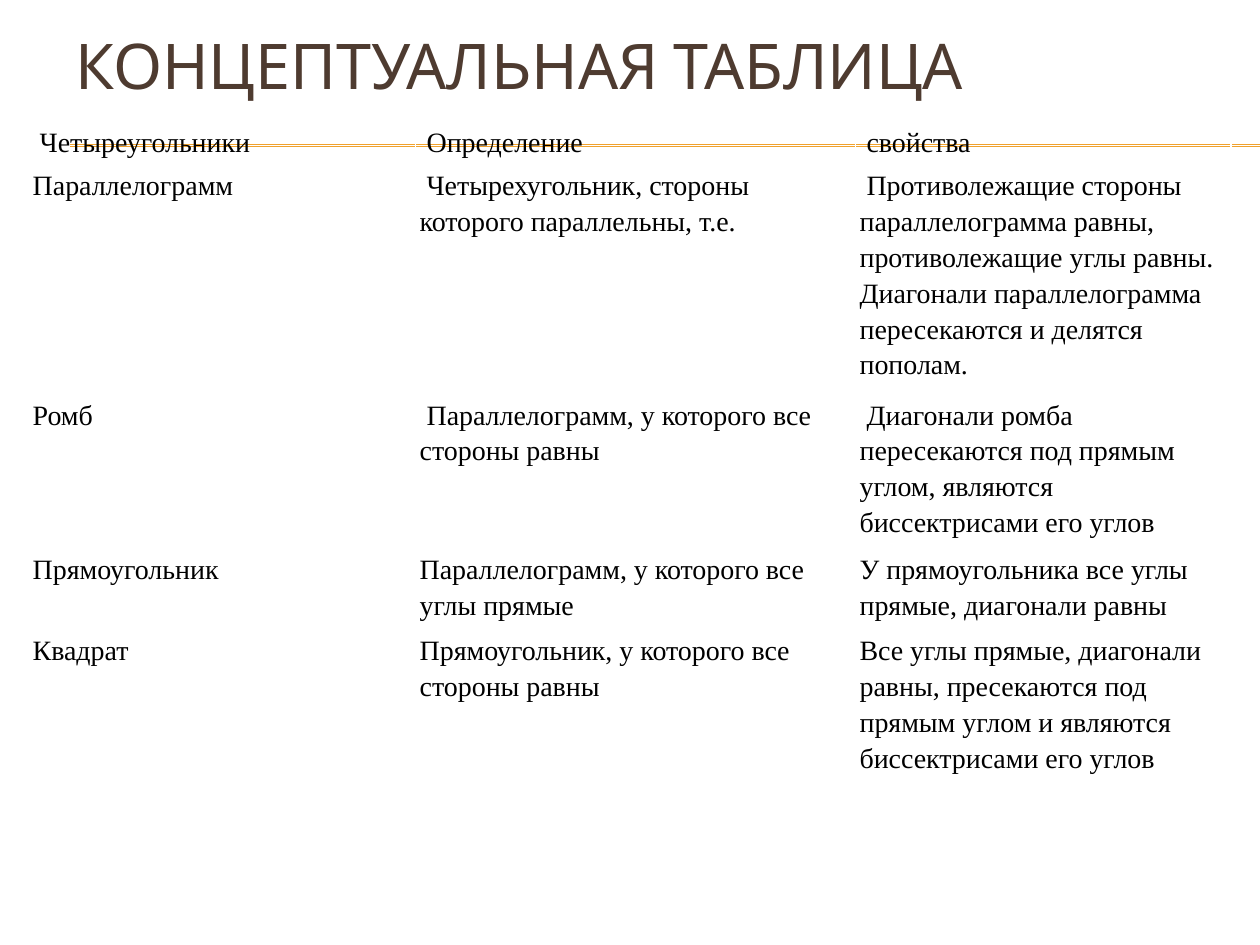
from typing import NamedTuple

from lxml import etree
from pptx import Presentation
from pptx.dml.color import RGBColor
from pptx.enum.shapes import MSO_CONNECTOR
from pptx.enum.text import MSO_ANCHOR, PP_ALIGN
from pptx.oxml.ns import qn
from pptx.util import Cm, Pt

STRAIGHT = MSO_CONNECTOR.STRAIGHT
LEFT = PP_ALIGN.LEFT
TOP, MIDDLE = MSO_ANCHOR.TOP, MSO_ANCHOR.MIDDLE

SLIDE_WIDTH, SLIDE_HEIGHT = Cm(25.4), Cm(19.05)
TITLE_ONLY = 5
BROWN, AMBER, BLACK, WHITE = "4E3B30", "F0A22E", "000000", "FFFFFF"
COLUMN_WIDTHS = (7.8, 8.87, 7.57)
CELL_INSET = Cm(0.08)


class TableRow(NamedTuple):
    height: float
    figure: str
    definition: str
    properties: str


ROWS = (
    TableRow(0.86, " Четыреугольники", " Определение", " свойства"),
    TableRow(4.62, "Параллелограмм",
             " Четырехугольник, стороны которого параллельны, т.е.",
             " Противолежащие стороны параллелограмма равны, противолежащие углы равны.\n"
             "Диагонали параллелограмма пересекаются и делятся пополам."),
    TableRow(3.12, "Ромб",
             " Параллелограмм, у которого все стороны равны",
             " Диагонали ромба пересекаются под прямым углом, являются биссектрисами его углов"),
    TableRow(1.63, "Прямоугольник",
             "Параллелограмм, у которого все углы прямые",
             "У прямоугольника все углы прямые, диагонали равны"),
    TableRow(3.89, "Квадрат",
             "Прямоугольник, у которого все стороны равны",
             "Все углы прямые, диагонали равны, пресекаются под прямым углом "
             "и являются биссектрисами его углов"),
)


def color(value: str) -> RGBColor:
    return RGBColor.from_string(value)


def write_text(frame, text: str, *, font: str, size: float, fill: str,
               spacing: float = 1.0) -> None:
    frame.word_wrap = True
    frame.text = text
    for paragraph in frame.paragraphs:
        paragraph.alignment = LEFT
        paragraph.line_spacing = spacing
        for run in paragraph.runs:
            run.font.name = font
            run.font.size = Pt(size)
            run.font.color.rgb = color(fill)


def draw_rule(slide, top: float) -> None:
    rule = slide.shapes.add_connector(STRAIGHT, Cm(1.42), Cm(top), SLIDE_WIDTH, Cm(top))
    rule.line.color.rgb = color(AMBER)
    rule.line.width = Pt(0.75)
    etree.SubElement(rule.line._get_or_add_ln().getparent(), qn("a:effectLst"))


def set_borders(cell, value: str, width: float) -> None:
    properties = cell._tc.get_or_add_tcPr()
    for position, side in enumerate(("a:lnL", "a:lnR", "a:lnT", "a:lnB")):
        border = etree.Element(qn(side), w=str(Pt(width)))
        solid = etree.SubElement(border, qn("a:solidFill"))
        etree.SubElement(solid, qn("a:srgbClr"), val=value)
        properties.insert(position, border)


def draw_table(slide, rows: tuple[TableRow, ...]) -> None:
    table = slide.shapes.add_table(
        len(rows), len(COLUMN_WIDTHS), Cm(0.58), Cm(2.39),
        Cm(sum(COLUMN_WIDTHS)), Cm(sum(row.height for row in rows))).table
    table.first_row = table.horz_banding = False
    for column, width in zip(table.columns, COLUMN_WIDTHS):
        column.width = Cm(width)
    for index, (height, *texts) in enumerate(rows):
        table.rows[index].height = Cm(height)
        for cell, text in zip(table.rows[index].cells, texts):
            cell.margin_left = cell.margin_right = CELL_INSET
            cell.margin_top = cell.margin_bottom = CELL_INSET
            cell.vertical_anchor = TOP
            cell.fill.background()
            set_borders(cell, WHITE, 1)
            write_text(cell.text_frame, text, font="Times New Roman", size=16,
                       fill=BLACK, spacing=1.15)


def main() -> None:
    deck = Presentation()
    deck.slide_width, deck.slide_height = SLIDE_WIDTH, SLIDE_HEIGHT
    slide = deck.slides.add_slide(deck.slide_layouts[TITLE_ONLY])
    slide.background.fill.solid()
    slide.background.fill.fore_color.rgb = color(WHITE)

    # Title
    title = slide.shapes.title
    title.left, title.top, title.width, title.height = Cm(1.27), Cm(0), Cm(22.86), Cm(2.59)
    title.text_frame.vertical_anchor = MIDDLE
    write_text(title.text_frame, "КОНЦЕПТУАЛЬНАЯ ТАБЛИЦА", font="Karla", size=36, fill=BROWN)

    # Double rule behind the table
    for top in (2.92, 2.95):
        draw_rule(slide, top)

    # Quadrilaterals, their definitions and properties
    draw_table(slide, ROWS)

    deck.save("out.pptx")


if __name__ == "__main__":
    main()
